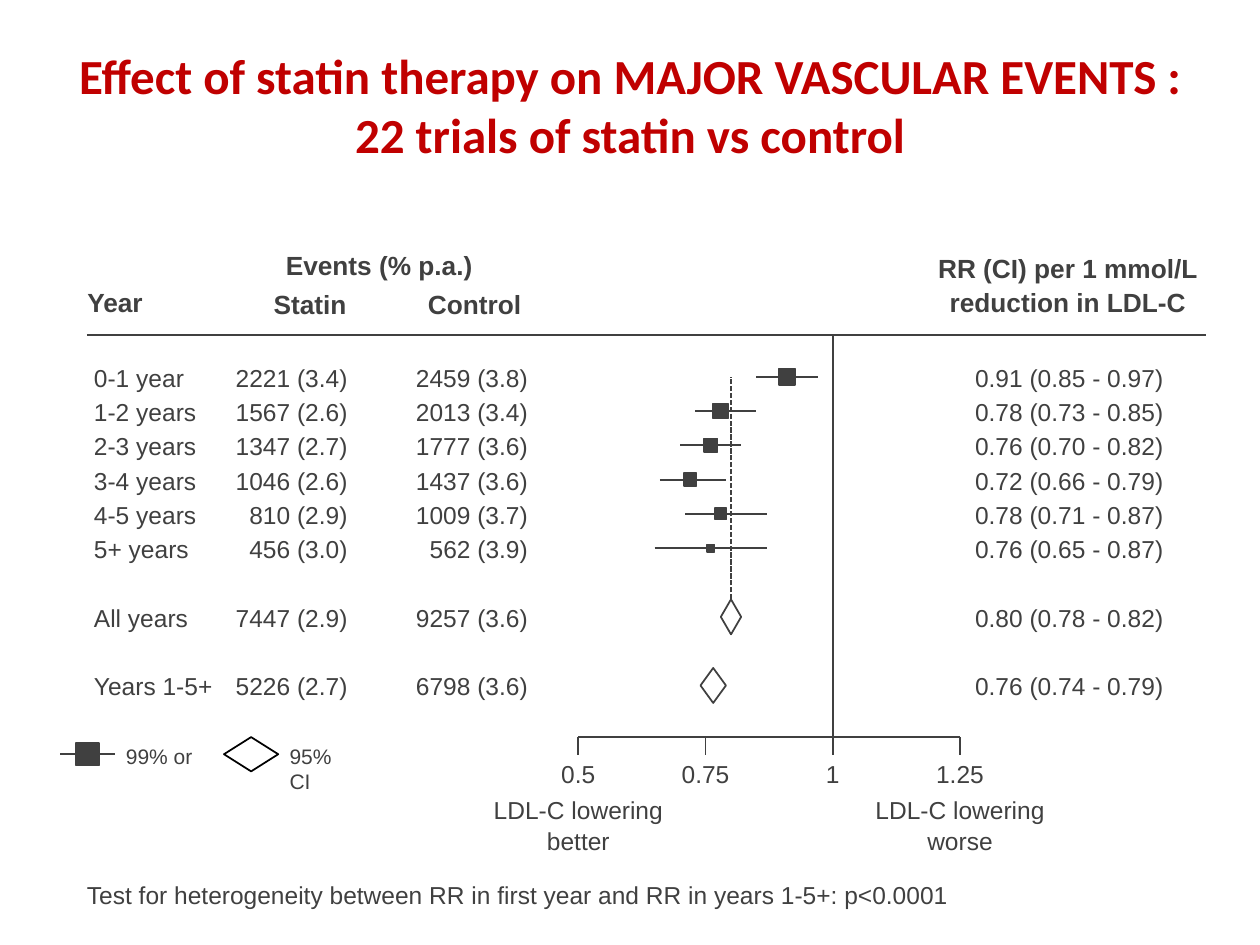
from collections import namedtuple

from lxml import etree
from pptx import Presentation
from pptx.dml.color import RGBColor
from pptx.enum.dml import MSO_LINE_DASH_STYLE as Dash
from pptx.enum.shapes import MSO_CONNECTOR as Connector, MSO_SHAPE as Shape
from pptx.enum.text import MSO_ANCHOR as Anchor, MSO_AUTO_SIZE as AutoSize, PP_ALIGN as Align
from pptx.oxml.ns import qn
from pptx.util import Pt

Box = namedtuple("Box", "left top width height")
# square is the marker size in points; None stands for a pooled diamond
Trial = namedtuple("Trial", "slot years statin control ratio low high square")

INK, RED, BLACK, WHITE = "404040", "C00000", "000000", "FFFFFF"
ROW_STEP = 19.6
FIRST_ROW = 23.8  # from the header rule to the middle of the first row
AXIS_LOW, AXIS_HIGH = 0.5, 1.25

TRIALS = [
    Trial(0, "0-1 year", "2221 (3.4)", "2459 (3.8)", 0.91, 0.85, 0.97, 9.4),
    Trial(1, "1-2 years", "1567 (2.6)", "2013 (3.4)", 0.78, 0.73, 0.85, 8.6),
    Trial(2, "2-3 years", "1347 (2.7)", "1777 (3.6)", 0.76, 0.70, 0.82, 7.9),
    Trial(3, "3-4 years", "1046 (2.6)", "1437 (3.6)", 0.72, 0.66, 0.79, 7.2),
    Trial(4, "4-5 years", "810 (2.9)", "1009 (3.7)", 0.78, 0.71, 0.87, 6.5),
    Trial(5, "5+ years", "456 (3.0)", "562 (3.9)", 0.76, 0.65, 0.87, 4.3),
    Trial(7, "All years", "7447 (2.9)", "9257 (3.6)", 0.80, 0.78, 0.82, None),
    Trial(9, "Years 1-5+", "5226 (2.7)", "6798 (3.6)", 0.76, 0.74, 0.79, None),
]


def color(hex_string):
    return RGBColor.from_string(hex_string)


def add_label(page, text, box, size=14, bold=False, align=Align.LEFT, gap=0):
    """Add text without margins; gap is the space between its lines."""
    frame = page.shapes.add_textbox(*map(Pt, box)).text_frame
    frame.word_wrap = False
    frame.margin_left = frame.margin_top = frame.margin_right = frame.margin_bottom = 0
    frame.text = text
    for number, para in enumerate(frame.paragraphs):
        para.alignment = align
        if number:
            para.space_before = Pt(gap)
        para.font.name, para.font.size, para.font.bold = "Arial", Pt(size), bold
        para.font.color.rgb = color(INK)


def add_line(page, x1, y1, x2, y2, dash=None):
    line = page.shapes.add_connector(Connector.STRAIGHT, *map(Pt, (x1, y1, x2, y2)))
    line.line.color.rgb = color(INK)
    line.line.width = Pt(1)
    if dash:
        line.line.dash_style = dash
    etree.SubElement(line._element.spPr, qn("a:effectLst"))


def add_marker(page, kind, x, y, width, height, fill=None, outline=INK):
    """Add a shape centred on x, y."""
    box = (x - width / 2, y - height / 2, width, height)
    marker = page.shapes.add_shape(kind, *map(Pt, box))
    marker.shadow.inherit = False
    if fill:
        marker.fill.solid()
        marker.fill.fore_color.rgb = color(fill)
    else:
        marker.fill.background()
    marker.line.color.rgb = color(outline)
    marker.line.width = Pt(1)


def add_title(page, box):
    title = page.shapes.title
    title.left, title.top, title.width, title.height = map(Pt, box)
    frame = title.text_frame
    frame.text = ("Effect of statin therapy on MAJOR VASCULAR EVENTS :\n"
                  "22 trials of statin vs control")
    frame.auto_size = AutoSize.NONE
    frame.vertical_anchor = Anchor.TOP
    for para in frame.paragraphs:
        para.alignment = Align.CENTER
        para.space_before = Pt(0)
        para.font.name, para.font.size, para.font.bold = "Calibri", Pt(28), True
        para.font.color.rgb = color(RED)


def add_header(page, box):
    headings = [
        ("Events (% p.a.)", 113, 0, 108, 18),
        ("Year", 0, 21, 32, 18),
        ("Statin", 106.5, 22, 42, 18),
        ("Control", 194.5, 22, 54, 18),
        ("RR (CI) per 1 mmol/L\nreduction in LDL-C", 485.5, 1.5, 150, 37),
    ]
    for text, x, y, width, height in headings:
        place = Box(box.left + x, box.top + y, width, height)
        add_label(page, text, place, 15, True, Align.CENTER, gap=1.5)
    bottom = box.top + box.height
    add_line(page, box.left, bottom, box.left + box.width, bottom)


def add_rows(page, box):
    for trial in TRIALS:
        top = box.top + FIRST_ROW + trial.slot * ROW_STEP - 8
        interval = f"{trial.ratio:.2f} ({trial.low:.2f} - {trial.high:.2f})"
        cells = [
            (trial.years, 4, 68, Align.LEFT),
            (trial.statin, 85, 64, Align.RIGHT),
            (trial.control, 188, 64, Align.RIGHT),
            (interval, 507.5, 108, Align.LEFT),
        ]
        for text, x, width, align in cells:
            add_label(page, text, Box(box.left + x, top, width, 17), align=align)


def add_plot(page, box):
    """Draw the axis along the bottom of the box and one mark for each trial."""
    bottom = box.top + box.height

    def at(value):
        return box.left + (value - AXIS_LOW) / (AXIS_HIGH - AXIS_LOW) * box.width

    def middle(slot):
        return box.top + FIRST_ROW + slot * ROW_STEP

    add_line(page, at(1), bottom, at(1), box.top)
    add_line(page, box.left, bottom, box.left + box.width, bottom)
    for value in (0.5, 0.75, 1, 1.25):
        add_line(page, at(value), bottom, at(value), bottom + 10)
        add_label(page, f"{value:g}", Box(at(value) - 14, bottom + 12.5, 28, 17),
                  align=Align.CENTER)
    for value, verdict in ((AXIS_LOW, "better"), (AXIS_HIGH, "worse")):
        add_label(page, f"LDL-C lowering\n{verdict}",
                  Box(at(value) - 49, bottom + 33, 98, 34), align=Align.CENTER, gap=1)

    for trial in TRIALS:
        y = middle(trial.slot)
        low, high = at(trial.low), at(trial.high)
        if trial.square:
            add_marker(page, Shape.RECTANGLE, at(trial.ratio), y,
                       trial.square, trial.square, INK)
            add_line(page, low, y, high, y)
        else:
            add_marker(page, Shape.DIAMOND, (low + high) / 2, y, high - low, 20)
    pooled = next(trial for trial in TRIALS if not trial.square)
    add_line(page, at(pooled.ratio), middle(pooled.slot) - 10,
             at(pooled.ratio), middle(0), Dash.SQUARE_DOT)


def add_legend(page, box):
    y = box.top + box.height / 2
    add_marker(page, Shape.RECTANGLE, box.left + 15.5, y, 13, 13, INK)
    add_line(page, box.left, y, box.left + 31, y)
    add_marker(page, Shape.DIAMOND, box.left + 109, y, 31, box.height, WHITE, BLACK)
    for text, x in (("99% or", 37.5), ("95% CI", 131)):
        add_label(page, text, Box(box.left + x, y - 6.3, 39, 14.4), 12)


def main():
    deck = Presentation()
    deck.slide_width, deck.slide_height = Pt(720), Pt(540)
    page = deck.slides.add_slide(deck.slide_layouts[5])
    add_title(page, Box(0, 22.3, 720, 71.3))
    add_header(page, Box(49.7, 142.5, 639.3, 49))
    add_rows(page, Box(49.7, 191.5, 639.3, 229.7))
    add_plot(page, Box(330.5, 191.5, 218.1, 229.7))
    add_legend(page, Box(34.5, 421.2, 170, 19.6))
    add_label(page, "Test for heterogeneity between RR in first year and RR in years 1-5+: p<0.0001",
              Box(49.7, 502.6, 494, 17))
    deck.save("out.pptx")


if __name__ == "__main__":
    main()
